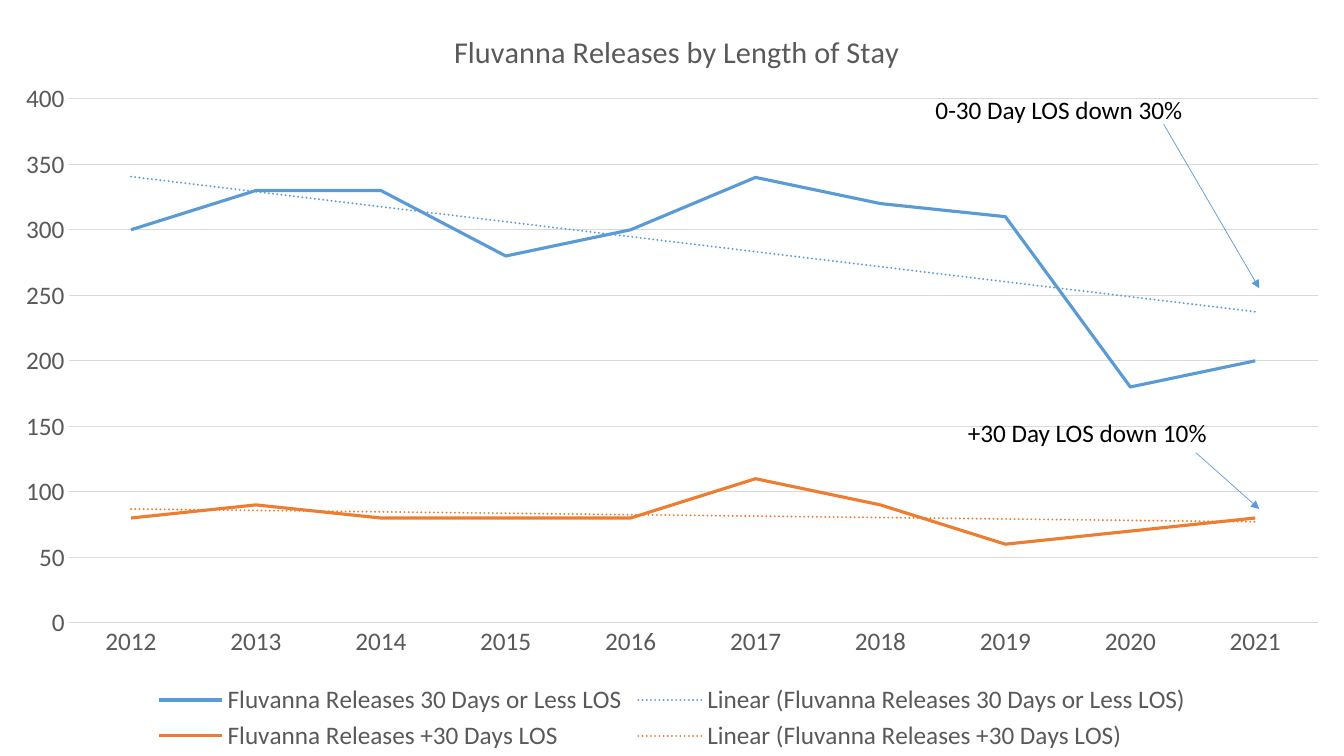
from dataclasses import dataclass

from pptx import Presentation
from pptx.chart.data import CategoryChartData
from pptx.dml.color import RGBColor
from pptx.enum.chart import XL_CHART_TYPE, XL_LEGEND_POSITION, XL_MARKER_STYLE, XL_TICK_MARK
from pptx.enum.shapes import MSO_CONNECTOR
from pptx.enum.text import MSO_AUTO_SIZE
from pptx.oxml import parse_xml
from pptx.oxml.ns import nsdecls, qn
from pptx.util import Inches, Pt


@dataclass(frozen=True)
class Theme:
    font: str = "Calibri"
    short_stay: str = "5B9BD5"
    long_stay: str = "ED7D31"
    grid: str = "D9D9D9"
    label: str = "595959"
    note: str = "000000"
    title_size: float = 21.6
    text_size: float = 18
    series_width: float = 2.25
    trend_width: float = 1.5
    grid_width: float = 0.75
    arrow_width: float = 0.5


WIDTH, HEIGHT = 13.33, 7.5
YEARS = [str(year) for year in range(2012, 2022)]
SHORT_STAYS = [300, 330, 330, 280, 300, 340, 320, 310, 180, 200]
LONG_STAYS = [80, 90, 80, 80, 80, 110, 90, 60, 70, 80]
TITLE_PLACE = {"x": 4.45, "y": 0.25}
PLOT_PLACE = {"x": 0.68, "y": 0.98, "w": 12.39, "h": 5.2}


def apply(target, **values):
    for name, value in values.items():
        setattr(target, name, value)


def chart_layout(place, target=""):
    """Turn a place in inches into a layout in fractions of the chart."""
    extents = {"x": WIDTH, "y": HEIGHT, "w": WIDTH, "h": HEIGHT}
    modes = "".join(f'<c:{side}Mode val="edge"/>' for side in "xy")
    parts = "".join(f'<c:{side} val="{length / extents[side]:.4f}"/>'
                    for side, length in place.items())
    return parse_xml(f'<c:layout {nsdecls("c")}><c:manualLayout>{target}{modes}{parts}'
                     '</c:manualLayout></c:layout>')


class ReleasesSlide:
    def __init__(self, presentation, theme):
        self.theme = theme
        self.slide = presentation.slides.add_slide(presentation.slide_layouts[6])

    def style_font(self, font, size, color):
        apply(font, name=self.theme.font, size=Pt(size), bold=False)
        font.color.rgb = RGBColor.from_string(color)

    def style_line(self, line, color, width):
        line.color.rgb = RGBColor.from_string(color)
        line.width = Pt(width)

    def line_chart(self, title, categories, series):
        """Draw the chart; series holds (name, values, color) tuples."""
        theme = self.theme
        data = CategoryChartData(number_format="General")
        data.categories = categories
        for name, values, _ in series:
            data.add_series(name, values)
        chart = self.slide.shapes.add_chart(
            XL_CHART_TYPE.LINE, 0, 0, Inches(WIDTH), Inches(HEIGHT), data).chart
        self.style_font(chart.font, theme.text_size, theme.label)
        self.title(chart, title)

        chart.has_legend = True
        apply(chart.legend, position=XL_LEGEND_POSITION.BOTTOM, include_in_layout=False)
        self.style_font(chart.legend.font, theme.text_size, theme.label)
        self.style_axes(chart)

        plot = chart.plots[0]
        plot.vary_by_categories = False
        for line, (_, _, color) in zip(plot.series, series):
            line.smooth = False
            line.marker.style = XL_MARKER_STYLE.NONE
            self.style_line(line.format.line, color, theme.series_width)
            self.trend_line(line, color)
        self.place_plot(plot.series[0])

    def title(self, chart, text):
        chart.has_title = True
        heading = chart.chart_title
        heading.include_in_layout = False
        heading.text_frame.text = text
        self.style_font(heading.text_frame.paragraphs[0].runs[0].font,
                        self.theme.title_size, self.theme.label)
        element = heading._element
        for layout in element.findall(qn("c:layout")):
            element.remove(layout)
        element.find(qn("c:tx")).addnext(chart_layout(TITLE_PLACE))

    def style_axes(self, chart):
        theme = self.theme
        years, releases = chart.category_axis, chart.value_axis
        for axis in (years, releases):
            apply(axis, major_tick_mark=XL_TICK_MARK.NONE, minor_tick_mark=XL_TICK_MARK.NONE)
            self.style_font(axis.tick_labels.font, theme.text_size, theme.label)
        apply(releases, minimum_scale=0, maximum_scale=400, major_unit=50,
              has_major_gridlines=True)
        releases.format.line.fill.background()
        for line in (years.format.line, releases.major_gridlines.format.line):
            self.style_line(line, theme.grid, theme.grid_width)

    def trend_line(self, series, color):
        trend = parse_xml(
            f'<c:trendline {nsdecls("c", "a")}><c:spPr>'
            f'<a:ln w="{Pt(self.theme.trend_width)}" cap="rnd">'
            f'<a:solidFill><a:srgbClr val="{color}"/></a:solidFill>'
            '<a:prstDash val="sysDot"/></a:ln></c:spPr>'
            '<c:trendlineType val="linear"/><c:dispRSqr val="0"/>'
            '<c:dispEq val="0"/></c:trendline>')
        series._element.find(qn("c:cat")).addprevious(trend)

    def place_plot(self, series):
        plot_area = series._element.getparent().getparent()
        for layout in plot_area.findall(qn("c:layout")):
            plot_area.remove(layout)
        plot_area.insert(0, chart_layout(PLOT_PLACE, '<c:layoutTarget val="inner"/>'))

    def note(self, text, left, top, width, wrap):
        box = self.slide.shapes.add_textbox(
            Inches(left), Inches(top), Inches(width), Inches(0.4))
        frame = box.text_frame
        apply(frame, word_wrap=wrap, auto_size=MSO_AUTO_SIZE.SHAPE_TO_FIT_TEXT, text=text)
        self.style_font(frame.paragraphs[0].runs[0].font,
                        self.theme.text_size, self.theme.note)

    def arrow(self, start, end):
        arrow = self.slide.shapes.add_connector(
            MSO_CONNECTOR.STRAIGHT, *map(Inches, start + end))
        self.style_line(arrow.line, self.theme.short_stay, self.theme.arrow_width)
        properties = arrow._element.spPr
        properties.find(qn("a:ln")).append(
            parse_xml(f'<a:tailEnd {nsdecls("a")} type="triangle"/>'))
        properties.append(parse_xml(f'<a:effectLst {nsdecls("a")}/>'))


def main():
    presentation = Presentation()
    apply(presentation, slide_width=Inches(WIDTH), slide_height=Inches(HEIGHT))
    theme = Theme()
    releases = ReleasesSlide(presentation, theme)
    releases.line_chart(
        "Fluvanna Releases by Length of Stay", YEARS,
        [("Fluvanna Releases 30 Days or Less LOS", SHORT_STAYS, theme.short_stay),
         ("Fluvanna Releases +30 Days LOS", LONG_STAYS, theme.long_stay)])
    releases.note("0-30 Day LOS down 30%", 9.18, 0.89, 2.68, wrap=False)
    releases.arrow((11.54, 1.23), (12.49, 2.86))
    releases.note("+30 Day LOS down 10%", 9.5, 4.09, 3.68, wrap=True)
    releases.arrow((11.86, 4.49), (12.49, 5.05))
    presentation.save("out.pptx")


if __name__ == "__main__":
    main()
